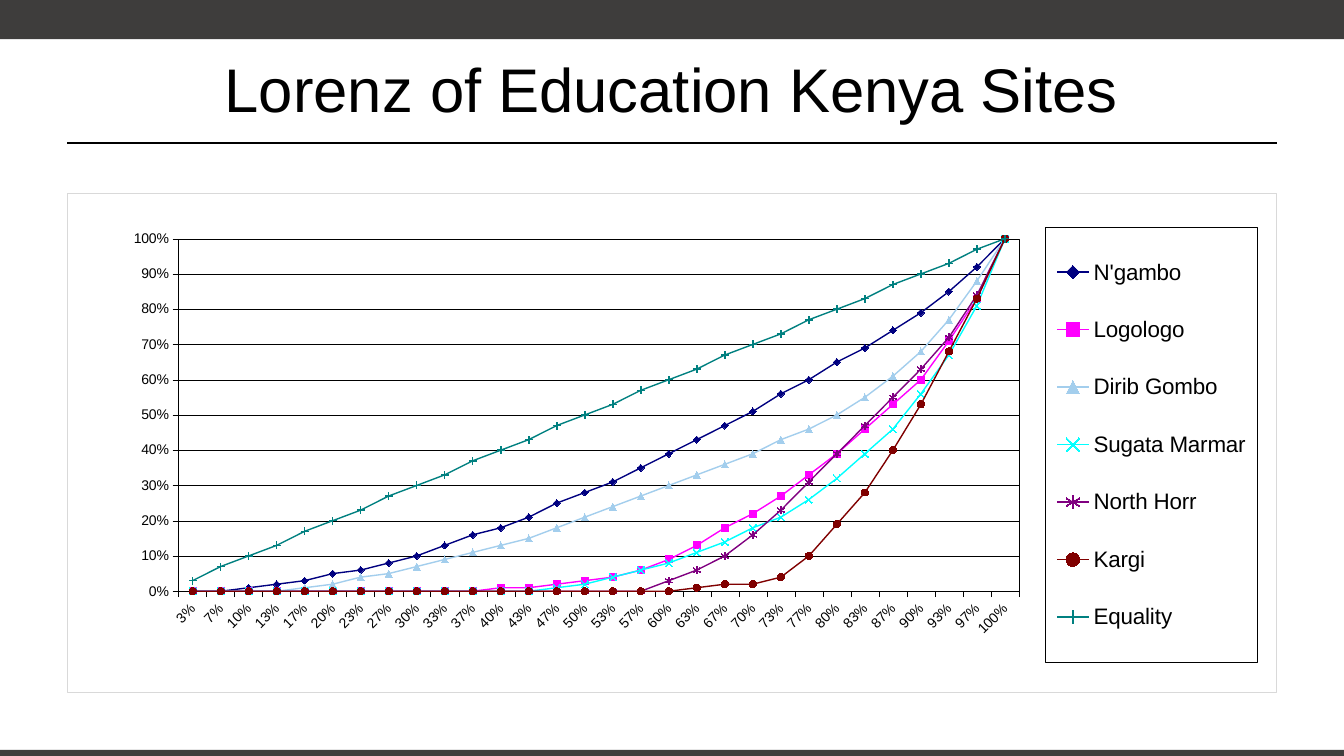
from dataclasses import dataclass

from lxml import etree
from pptx import Presentation
from pptx.chart.data import CategoryChartData
from pptx.dml.color import RGBColor
from pptx.enum import chart as ch, shapes, text
from pptx.oxml import parse_xml
from pptx.oxml.ns import nsdecls, qn
from pptx.util import Pt


@dataclass(frozen=True)
class Theme:
    font: str = "Arial"
    ink: str = "000000"
    paper: str = "FFFFFF"
    bar: str = "3E3D3C"
    frame: str = "D9D9D9"
    title_size: float = 44
    axis_size: float = 10
    legend_size: float = 16
    hairline: float = 0.25
    rule: float = 1.25
    curve: float = 1
    marker: int = 5


STEPS = 30
MARK = ch.XL_MARKER_STYLE
# Cumulative shares in percent; the zeros at the start are left out
SITES = [
    ("N'gambo", "000080", MARK.DIAMOND,
     [1, 2, 3, 5, 6, 8, 10, 13, 16, 18, 21, 25, 28, 31, 35, 39, 43, 47, 51,
      56, 60, 65, 69, 74, 79, 85, 92, 100]),
    ("Logologo", "FF00FF", MARK.SQUARE,
     [1, 1, 2, 3, 4, 6, 9, 13, 18, 22, 27, 33, 39, 46, 53, 60, 71, 83, 100]),
    ("Dirib Gombo", "A3CEED", MARK.TRIANGLE,
     [1, 2, 4, 5, 7, 9, 11, 13, 15, 18, 21, 24, 27, 30, 33, 36, 39, 43, 46,
      50, 55, 61, 68, 77, 88, 100]),
    ("Sugata Marmar", "00FFFF", MARK.X,
     [1, 2, 4, 6, 8, 11, 14, 18, 21, 26, 32, 39, 46, 56, 67, 81, 100]),
    ("North Horr", "800080", MARK.STAR,
     [3, 6, 10, 16, 23, 31, 39, 47, 55, 63, 72, 84, 100]),
    ("Kargi", "800000", MARK.CIRCLE,
     [1, 2, 2, 4, 10, 19, 28, 40, 53, 68, 83, 100]),
    ("Equality", "008080", MARK.PLUS,
     [round(100 * k / STEPS) for k in range(1, STEPS + 1)]),
]
OPEN_MARKERS = (MARK.X, MARK.STAR, MARK.PLUS)


class SlideBuilder:
    def __init__(self, slide, theme):
        self.slide = slide
        self.theme = theme

    def style_font(self, font, size):
        font.size = Pt(size)
        font.name = self.theme.font
        font.bold = False
        font.color.rgb = RGBColor.from_string(self.theme.ink)

    def style_line(self, line, color, width):
        line.color.rgb = RGBColor.from_string(color)
        line.width = Pt(width)

    def title(self, words, left, top, width, height):
        sp = self.slide.shapes.title
        sp.left, sp.top, sp.width, sp.height = map(Pt, (left, top, width, height))
        tf = sp.text_frame
        tf.word_wrap = True
        tf.vertical_anchor = text.MSO_ANCHOR.MIDDLE
        p = tf.paragraphs[0]
        p.alignment = text.PP_ALIGN.CENTER
        r = p.add_run()
        r.text = words
        self.style_font(r.font, self.theme.title_size)

    def bar(self, left, top, width, height):
        sp = self.slide.shapes.add_shape(
            shapes.MSO_SHAPE.RECTANGLE, Pt(left), Pt(top), Pt(width), Pt(height))
        sp.shadow.inherit = False
        sp.fill.solid()
        sp.fill.fore_color.rgb = RGBColor.from_string(self.theme.bar)
        sp.line.fill.background()

    def rule(self, left, right, y):
        line = self.slide.shapes.add_connector(
            shapes.MSO_CONNECTOR.STRAIGHT, Pt(left), Pt(y), Pt(right), Pt(y))
        self.style_line(line.line, self.theme.ink, self.theme.rule)
        etree.SubElement(line._element.spPr, qn("a:effectLst"))

    def box_xml(self, color, fill=True):
        paint = f'<a:solidFill><a:srgbClr val="{self.theme.paper}"/></a:solidFill>'
        return parse_xml(
            f'<c:spPr {nsdecls("c", "a")}>{paint if fill else "<a:noFill/>"}'
            f'<a:ln w="{Pt(self.theme.hairline)}"><a:solidFill>'
            f'<a:srgbClr val="{color}"/></a:solidFill></a:ln></c:spPr>')

    def layout_xml(self, x, y, w, h, inner=False):
        target = '<c:layoutTarget val="inner"/>' if inner else ""
        return parse_xml(
            f'<c:layout {nsdecls("c")}><c:manualLayout>{target}'
            '<c:xMode val="edge"/><c:yMode val="edge"/>'
            f'<c:x val="{x}"/><c:y val="{y}"/><c:w val="{w}"/><c:h val="{h}"/>'
            '</c:manualLayout></c:layout>')

    def style_axis(self, axis):
        axis.major_tick_mark = ch.XL_TICK_MARK.OUTSIDE
        axis.minor_tick_mark = ch.XL_TICK_MARK.NONE
        self.style_font(axis.tick_labels.font, self.theme.axis_size)
        self.style_line(axis.format.line, self.theme.ink, self.theme.hairline)

    def style_series(self, series, color, marker):
        rgb = RGBColor.from_string(color)
        series.smooth = False
        self.style_line(series.format.line, color, self.theme.curve)
        series.marker.style = marker
        series.marker.size = self.theme.marker
        fill = series.marker.format.fill
        if marker in OPEN_MARKERS:
            fill.background()
        else:
            fill.solid()
            fill.fore_color.rgb = rgb
        series.marker.format.line.color.rgb = rgb

    def lorenz_chart(self, sites, left, top, width, height):
        # Data
        data = CategoryChartData(number_format="0%")
        data.categories = [f"{k / STEPS:.0%}" for k in range(1, STEPS + 1)]
        for name, _, _, shares in sites:
            padded = [0] * (STEPS - len(shares)) + shares
            data.add_series(name, [share / 100 for share in padded])
        chart = self.slide.shapes.add_chart(
            ch.XL_CHART_TYPE.LINE_MARKERS, Pt(left), Pt(top), Pt(width),
            Pt(height), data).chart
        self.style_font(chart.font, self.theme.axis_size)
        chart.has_title = False

        # Curves
        plot = chart.plots[0]
        plot.vary_by_categories = False
        for series, (_, color, marker, _) in zip(plot.series, sites):
            self.style_series(series, color, marker)

        # Axes
        shares, people = chart.value_axis, chart.category_axis
        self.style_axis(shares)
        self.style_axis(people)
        shares.minimum_scale, shares.maximum_scale = 0, 1
        shares.major_unit = 0.1
        shares.tick_labels.number_format = "0%"
        shares.tick_labels.number_format_is_linked = False
        shares.has_major_gridlines = True
        self.style_line(shares.major_gridlines.format.line,
                        self.theme.ink, self.theme.hairline)
        body = people._element.find(qn("c:txPr")).find(qn("a:bodyPr"))
        body.set("rot", str(-45 * 60000))
        body.set("vert", "horz")

        # Legend
        chart.has_legend = True
        legend = chart.legend
        legend.position = ch.XL_LEGEND_POSITION.RIGHT
        legend.include_in_layout = False
        self.style_font(legend.font, self.theme.legend_size)
        box = legend._element
        for old in box.findall(qn("c:layout")):
            box.remove(old)
        box.find(qn("c:legendPos")).addnext(
            self.layout_xml(0.809, 0.067, 0.175, 0.874))
        box.find(qn("c:overlay")).addnext(self.box_xml(self.theme.ink))

        # Plot area and frame
        space = chart._chartSpace
        area = space.chart.plotArea
        for old in area.findall(qn("c:layout")):
            area.remove(old)
        area.insert(0, self.layout_xml(0.092, 0.091, 0.695, 0.707, inner=True))
        area.append(self.box_xml(self.theme.ink, fill=False))
        space.chart.addnext(self.box_xml(self.theme.frame))


def main():
    prs = Presentation()
    prs.slide_width, prs.slide_height = Pt(960), Pt(540)
    slide = prs.slides.add_slide(prs.slide_layouts[5])
    page = SlideBuilder(slide, Theme())
    # Bars and rule
    page.bar(0, 0, 960, 28)
    page.bar(0, 535.7, 960, 4.3)
    page.rule(48, 912, 102)
    # Title and chart
    page.title("Lorenz of Education Kenya Sites", 48, 18, 864, 90)
    page.lorenz_chart(SITES, 48, 138, 864, 356.5)
    prs.save("out.pptx")


if __name__ == "__main__":
    main()
